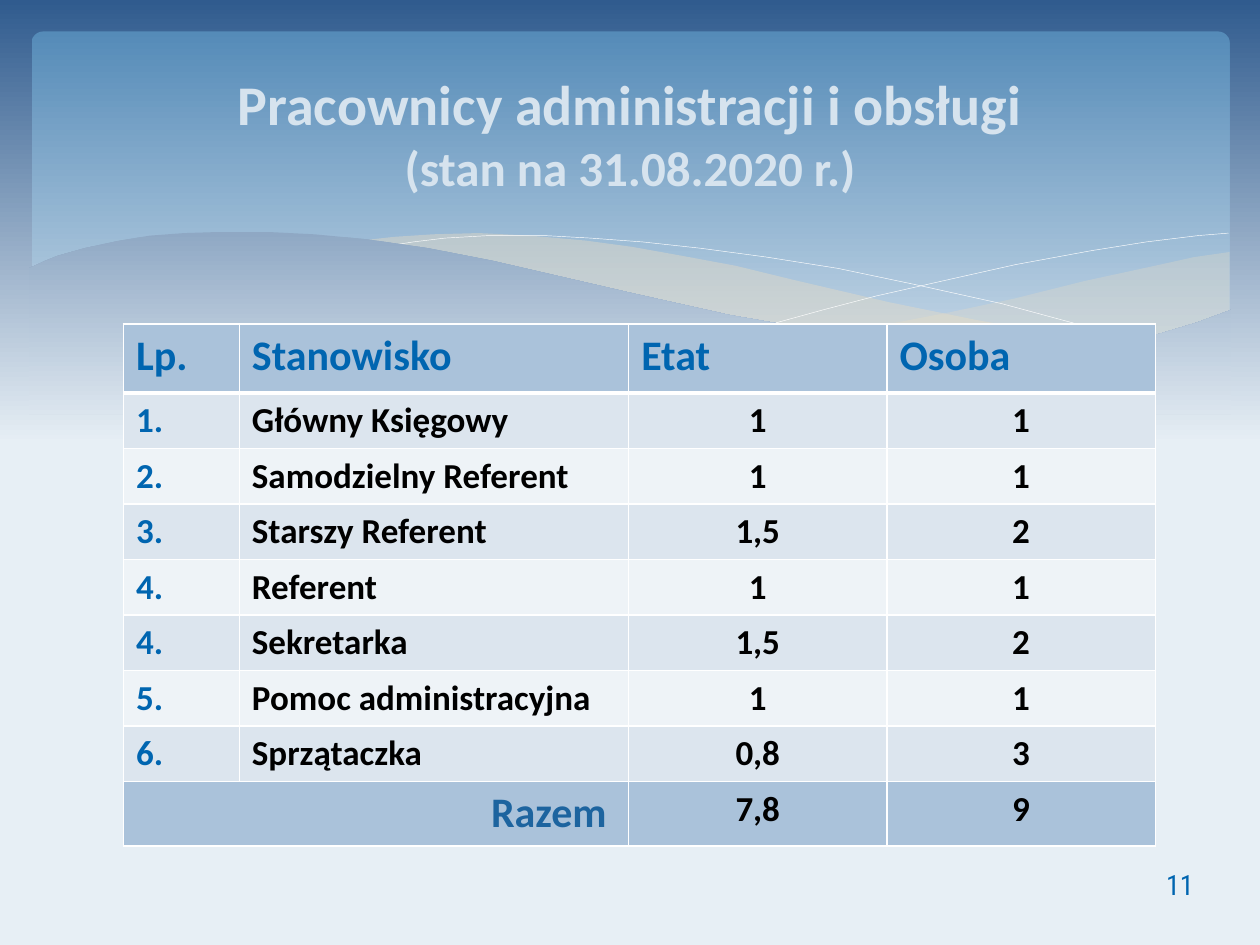
"""Build the staff slide: waves, title, staffing table and page number."""
import pptx
import pptx.dml.color
import pptx.enum.shapes
import pptx.enum.text
import pptx.oxml
import pptx.oxml.ns
import pptx.util
from lxml import etree

Inches = pptx.util.Inches
Pt = pptx.util.Pt
ALIGN = pptx.enum.text.PP_ALIGN
MIDDLE = pptx.enum.text.MSO_ANCHOR.MIDDLE

COLORS = {
    "sky": "305B8E", "mist": "E7EFF5", "wave_top": "8FA8C4", "wave_bottom": "DBE5EE",
    "panel_top": "558BB8", "panel_bottom": "BFD3E4", "sand": "EBDDC3", "white": "FFFFFF",
    "title": "D6E3EE", "blue": "0065B0", "total": "1D649F", "black": "000000",
    "header": "AAC2DA", "odd": "DCE5EE", "even": "EEF3F7",
}
TITLE = [("Pracownicy administracji i obsługi", 32), ("(stan na 31.08.2020 r.)", 28)]
PAGE_NUMBER = "11"
HEADINGS = ("Lp.", "Stanowisko", "Etat", "Osoba")
STAFF = [
    ("1.", "Główny Księgowy", "1", "1"),
    ("2.", "Samodzielny Referent", "1", "1"),
    ("3.", "Starszy Referent", "1,5", "2"),
    ("4.", "Referent", "1", "1"),
    ("4.", "Sekretarka", "1,5", "2"),
    ("5.", "Pomoc administracyjna", "1", "1"),
    ("6.", "Sprzątaczka", "0,8", "3"),
]
TOTAL = ("Razem ", "", "7,8", "9")
COLUMN_WIDTHS = (0.92, 3.09, 2.05, 2.13)
ROW_HEIGHTS = [0.55] + [0.44] * len(STAFF) + [0.51]

SAND_RIGHT = [
    (9.76, 2), (9.48, 2.04), (9.21, 2.1), (8.61, 2.23), (8.05, 2.37), (7.53, 2.48),
    (7.06, 2.57), (6.61, 2.65), (7.05, 2.71), (7.45, 2.75), (7.81, 2.77), (8.14, 2.78),
    (8.54, 2.76), (8.89, 2.72), (9.21, 2.65), (9.49, 2.57), (9.76, 2.47),
]
SAND_MIDDLE = [
    (8.93, 2.73), (8.37, 2.65), (7.75, 2.54), (7.06, 2.4), (6.29, 2.22), (5.84, 2.11),
    (5.41, 2.03), (5.02, 1.96), (4.65, 1.91), (4.2, 1.87), (3.8, 1.85), (3.44, 1.86),
    (3.13, 1.88), (2.86, 1.91), (3.42, 1.99), (4.04, 2.11), (4.49, 2.22), (5.3, 2.4),
    (6.01, 2.55), (6.5, 2.64), (6.95, 2.7), (7.36, 2.75), (7.73, 2.77), (8.18, 2.78),
    (8.57, 2.77),
]
LINE_FALLING = [
    (3.09, 1.95), (3.28, 1.92), (3.53, 1.89), (3.87, 1.87), (4.33, 1.87), (4.69, 1.89),
    (5.1, 1.92), (5.56, 1.97), (6.08, 2.04), (6.65, 2.13), (7.27, 2.26), (7.95, 2.41),
    (8.69, 2.61), (9.07, 2.72),
]
LINE_RISING = [
    (6.13, 2.57), (6.53, 2.46), (6.95, 2.35), (7.48, 2.23), (8.06, 2.1), (8.66, 1.99),
    (9.1, 1.92), (9.51, 1.87), (9.75, 1.85),
]
WAVE = [
    (9.77, 2.46), (9.5, 2.56), (9.2, 2.65), (8.87, 2.71), (8.5, 2.75), (8.09, 2.77),
    (7.61, 2.75), (7.08, 2.7), (6.48, 2.62), (5.79, 2.5), (5.03, 2.33), (4.47, 2.2),
    (3.91, 2.07), (3.4, 1.97), (2.92, 1.9), (2.5, 1.86), (2.11, 1.84), (1.77, 1.84),
    (1.46, 1.85), (1.19, 1.87), (0.95, 1.91), (0.67, 1.97), (0.46, 2.03), (0.36, 2.07),
    (0.23, 2.13), (0.23, 3.29), (9.77, 3.29),
]


def rgb(name):
    return pptx.dml.color.RGBColor.from_string(COLORS[name])


def fill_gradient(fill, top, bottom, end):
    fill.gradient()
    fill.gradient_angle = 270
    for stop, name, position in zip(fill.gradient_stops, (top, bottom), (0, end)):
        stop.color.rgb = rgb(name)
        stop.position = position


def add_curve(slide, points, closed):
    builder = slide.shapes.build_freeform(
        Inches(points[0][0]), Inches(points[0][1]), scale=1.0)
    builder.add_line_segments([(Inches(x), Inches(y)) for x, y in points[1:]], close=closed)
    shape = builder.convert_to_shape()
    shape.shadow.inherit = False
    if closed:
        shape.line.fill.background()
    else:
        shape.fill.background()
        shape.line.color.rgb = rgb("white")
        shape.line.width = Pt(0.25)
    return shape


def add_sand(slide, points, opacity):
    shape = add_curve(slide, points, True)
    shape.fill.solid()
    shape.fill.fore_color.rgb = rgb("sand")
    color = shape.element.spPr.find(".//" + pptx.oxml.ns.qn("a:srgbClr"))
    etree.SubElement(color, pptx.oxml.ns.qn("a:alpha"), val=str(opacity * 1000))


def add_background(slide):
    fill_gradient(slide.background.fill, "sky", "mist", 0.47)
    panel = slide.shapes.add_shape(
        pptx.enum.shapes.MSO_SHAPE.ROUNDED_RECTANGLE,
        Inches(0.25), Inches(0.25), Inches(9.51), Inches(2.7))
    panel.adjustments[0] = 0.034
    panel.shadow.inherit = False
    panel.line.fill.background()
    fill_gradient(panel.fill, "panel_top", "panel_bottom", 0.9)
    add_sand(slide, SAND_RIGHT, 29)
    add_sand(slide, SAND_MIDDLE, 40)
    add_curve(slide, LINE_FALLING, False)
    add_curve(slide, LINE_RISING, False)
    fill_gradient(add_curve(slide, WAVE, True).fill, "wave_top", "wave_bottom", 1)


def set_borders(cell, widths):
    properties = cell._tc.get_or_add_tcPr()
    for index, (side, width) in enumerate(zip("LRTB", widths)):
        properties.insert(index, pptx.oxml.parse_xml(
            f'<a:ln{side} {pptx.oxml.ns.nsdecls("a")} w="{Pt(width)}"><a:solidFill>'
            f'<a:srgbClr val="{COLORS["white"]}"/></a:solidFill></a:ln{side}>'))


def style_font(font, size, color, bold=True, name="Calibri"):
    font.name = name
    font.size = Pt(size)
    font.bold = bold
    font.color.rgb = rgb(color)


def add_staff_table(slide):
    rows = [HEADINGS, *STAFF, TOTAL]
    last = len(rows) - 1
    table = slide.shapes.add_table(
        len(rows), len(HEADINGS), Inches(0.98), Inches(2.57),
        Inches(sum(COLUMN_WIDTHS)), Inches(sum(ROW_HEIGHTS))).table
    for column, width in zip(table.columns, COLUMN_WIDTHS):
        column.width = Inches(width)
    for row, height in zip(table.rows, ROW_HEIGHTS):
        row.height = Inches(height)
    table.cell(last, 0).merge(table.cell(last, 1))
    for r, texts in enumerate(rows):
        band = "header" if r in (0, last) else "odd" if r % 2 else "even"
        for c, text in enumerate(texts):
            cell = table.cell(r, c)
            cell.fill.solid()
            cell.fill.fore_color.rgb = rgb(band)
            set_borders(cell, (1, 1, 3 if r == 1 else 1, 3 if r == 0 else 1))
            if not text:
                continue
            cell.text = text
            paragraph = cell.text_frame.paragraphs[0]
            is_total = r == last and c == 0
            if is_total:
                paragraph.alignment = ALIGN.RIGHT
            elif r and c > 1:
                paragraph.alignment = ALIGN.CENTER
            color = "total" if is_total else "blue" if r == 0 or c == 0 else "black"
            style_font(paragraph.font, 24 if r == 0 or is_total else 20, color)


def add_title(slide):
    title = slide.shapes.title
    title.element.getparent().append(title.element)
    title.left, title.top, title.width, title.height = map(Inches, (0.5, 0.37, 9, 1.37))
    title.text_frame.vertical_anchor = MIDDLE
    paragraph = title.text_frame.paragraphs[0]
    paragraph.alignment = ALIGN.CENTER
    for index, (text, size) in enumerate(TITLE):
        if index:
            paragraph.add_line_break()
        run = paragraph.add_run()
        run.text = text
        style_font(run.font, size, "title")


def add_page_number(slide):
    box = slide.shapes.add_textbox(Inches(8.73), Inches(6.82), Inches(1.27), Inches(0.4))
    box.text_frame.word_wrap = True
    box.text_frame.vertical_anchor = MIDDLE
    paragraph = box.text_frame.paragraphs[0]
    paragraph.text = PAGE_NUMBER
    paragraph.alignment = ALIGN.CENTER
    style_font(paragraph.font, 16, "blue", False, "Roboto Condensed")


def main():
    presentation = pptx.Presentation()
    presentation.slide_width, presentation.slide_height = Inches(10), Inches(7.5)
    slide = presentation.slides.add_slide(presentation.slide_layouts[5])
    add_background(slide)
    add_staff_table(slide)
    add_title(slide)
    add_page_number(slide)
    presentation.save("out.pptx")


if __name__ == "__main__":
    main()
